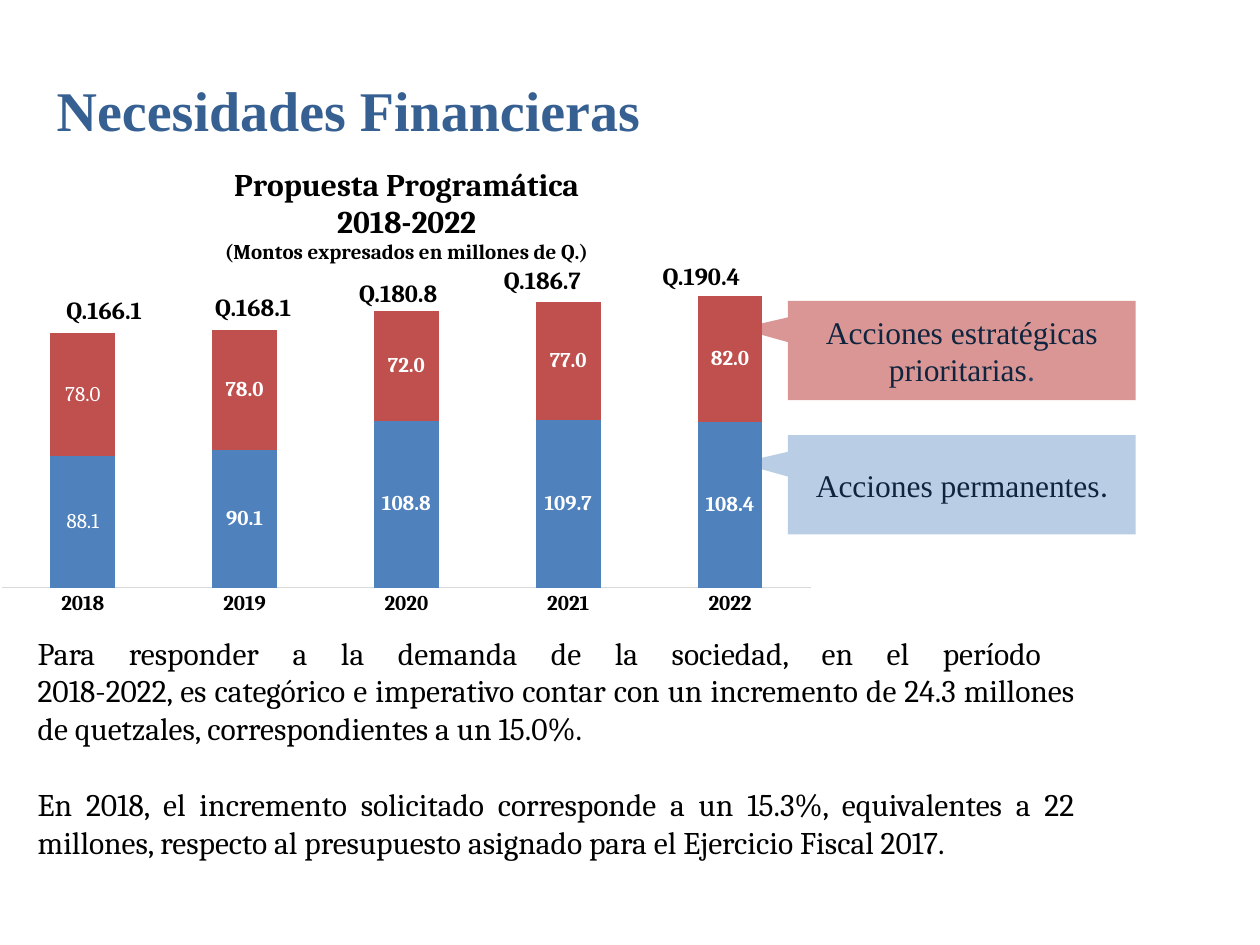
from dataclasses import dataclass

from lxml.etree import SubElement
from pptx import Presentation
from pptx.chart.data import CategoryChartData
from pptx.dml.color import RGBColor
from pptx.enum.chart import XL_CHART_TYPE as ChartType, XL_LABEL_POSITION as LabelPosition
from pptx.enum.chart import XL_TICK_LABEL_POSITION as TickLabels, XL_TICK_MARK as TickMark
from pptx.enum.shapes import MSO_SHAPE as Preset
from pptx.enum.text import MSO_ANCHOR as Anchor, MSO_AUTO_SIZE as AutoSize, PP_ALIGN as Align
from pptx.oxml import parse_xml
from pptx.oxml.ns import nsdecls, qn
from pptx.util import Cm, Pt

SERIF, HEADING = "Cambria", "Times New Roman"
BLACK, WHITE, NAVY = "000000", "FFFFFF", "0F243E"


@dataclass
class Total:
    text: str
    left: float
    top: float


@dataclass
class Callout:
    text: str
    top: float
    fill: str
    stop_color: str


@dataclass
class Series:
    name: str
    values: tuple
    color: str
    first_label: str


TOTALS = [
    Total("Q.166.1", 1.09, 5.82),
    Total("Q.168.1", 4.09, 5.77),
    Total("Q.180.8", 6.99, 5.49),
    Total("Q.186.7", 9.91, 5.21),
    Total("Q.190.4", 13.11, 5.13),
]
CALLOUTS = [
    Callout("Acciones estratégicas prioritarias", 3.56, "D99694", "254061"),
    Callout("Acciones permanentes", 6.27, "B9CDE5", NAVY),
]
YEARS = ["2018", "2019", "2020", "2021", "2022"]
SERIES = [
    Series("Series 1", (86.1, 90.1, 108.8, 109.7, 108.4), "4F81BD", "88.1"),
    Series("Series 2", (80, 78, 72, 77, 82), "C0504D", "78.0"),
]
CHART_TITLE = [
    ("Propuesta Programática", 18),
    ("2018-2022", 18),
    ("(Montos expresados en millones de Q.)", 12),
]
BODY = [
    "Para responder a la demanda de la sociedad, en el período \v"
    "2018-2022, es categórico e imperativo contar con un incremento de "
    "24.3 millones de quetzales, correspondientes a un 15.0%. ",
    "En 2018, el incremento solicitado corresponde a un 15.3%, equivalentes a "
    "22 millones, respecto al presupuesto asignado para el Ejercicio Fiscal 2017.",
]


def rgb(value: str) -> RGBColor:
    return RGBColor.from_string(value)


def style(font, size: float, name: str, color: str, bold: bool = False) -> None:
    font.size, font.name, font.bold = Pt(size), name, bold
    font.color.rgb = rgb(color)


def add_text(page, left: float, top: float, width: float, height: float, text: str):
    box = page.shapes.add_textbox(Cm(left), Cm(top), Cm(width), Cm(height))
    frame = box.text_frame
    frame.word_wrap = True
    frame.auto_size = AutoSize.SHAPE_TO_FIT_TEXT
    frame.text = text
    return frame


def add_total(page, total: Total) -> None:
    frame = add_text(page, total.left, total.top, 2.39, 0.86, total.text)
    style(frame.paragraphs[0].runs[0].font, 14, SERIF, BLACK, True)


def add_callout(page, callout: Callout) -> None:
    # Turned on its side so that the pointer leaves from the short edge
    box = page.shapes.add_shape(Preset.RECTANGULAR_CALLOUT, Cm(18.39), Cm(callout.top), Cm(2), Cm(7.01))
    box.rotation = 90
    box.adjustments[0], box.adjustments[1] = -0.22, 0.64
    box.shadow.inherit = False
    box.fill.solid()
    box.fill.fore_color.rgb = rgb(callout.fill)
    box.line.fill.background()
    frame = box.text_frame
    frame.word_wrap = True
    frame.vertical_anchor = Anchor.MIDDLE
    frame._txBody.bodyPr.set("vert", "vert270")
    frame.text = callout.text
    para = frame.paragraphs[0]
    para.alignment = Align.CENTER
    style(para.runs[0].font, 18, HEADING, NAVY)
    stop = para.add_run()
    stop.text = "."
    style(stop.font, 18, "Calibri", callout.stop_color)


def place(parent, index: int, **settings) -> None:
    """Give a chart part a manual layout, in fractions of the chart."""
    layout = parent.find(qn("c:layout"))
    if layout is None:
        layout = parse_xml(f"<c:layout {nsdecls('c')}/>")
        parent.insert(index, layout)
    manual = SubElement(layout, qn("c:manualLayout"))
    for tag, value in settings.items():
        SubElement(manual, qn(f"c:{tag}")).set("val", str(value))


def add_budget_chart(page) -> None:
    data = CategoryChartData(number_format="0.0")
    data.categories = YEARS
    for item in SERIES:
        data.add_series(item.name, item.values)
    chart = page.shapes.add_chart(
        ChartType.COLUMN_STACKED, Cm(-0.3), Cm(2.97), Cm(16.99), Cm(9.65), data
    ).chart
    chart.has_legend = False
    style(chart.font, 10, "Calibri", BLACK)
    chart._chartSpace.chart.addnext(
        parse_xml(f"<c:spPr {nsdecls('c', 'a')}><a:noFill/><a:ln><a:noFill/></a:ln></c:spPr>")
    )

    # Chart title, kept clear of the yearly totals
    frame = chart.chart_title.text_frame
    frame.text = "\n".join(text for text, _ in CHART_TITLE)
    for para, (_, size) in zip(frame.paragraphs, CHART_TITLE):
        style(para.runs[0].font, size, SERIF, BLACK, True)
    place(chart.chart_title._element, 1, xMode="edge", yMode="edge", x=0.28, y=0.03)
    place(chart._chartSpace.chart.plotArea, 0, layoutTarget="inner", xMode="edge",
          yMode="edge", x=0.02, y=0.28, w=0.96, h=0.64)

    # Axes
    years, amounts = chart.category_axis, chart.value_axis
    style(years.tick_labels.font, 12, SERIF, BLACK, True)
    years.tick_label_position = TickLabels.NEXT_TO_AXIS
    years.major_tick_mark = years.minor_tick_mark = TickMark.NONE
    years.format.line.color.rgb = rgb("D9D9D9")
    years.format.line.width = Pt(0.75)
    amounts.minimum_scale, amounts.maximum_scale = 0, 200
    amounts.has_major_gridlines = False
    amounts.visible = False

    # Columns and their labels
    plot = chart.plots[0]
    plot.gap_width, plot.overlap = 150, 100
    plot.vary_by_categories = False
    for series, item in zip(plot.series, SERIES):
        series.format.fill.solid()
        series.format.fill.fore_color.rgb = rgb(item.color)
        labels = series.data_labels
        labels.show_value = True
        labels.number_format, labels.number_format_is_linked = "0.0", False
        labels.position = LabelPosition.CENTER
        style(labels.font, 12, SERIF, WHITE, True)
        first = series.points[0].data_label
        first.text_frame.text = item.first_label
        style(first.text_frame.paragraphs[0].runs[0].font, 12, SERIF, WHITE)
        first.position = LabelPosition.CENTER


def main() -> None:
    deck = Presentation()
    deck.slide_width, deck.slide_height = Cm(25.4), Cm(19.05)
    page = deck.slides.add_slide(deck.slide_layouts[5])

    # Title
    title = page.shapes.title
    title.left, title.top, title.width, title.height = Cm(0.89), Cm(0.53), Cm(13.23), Cm(3.35)
    title.text_frame.text = "Necesidades Financieras"
    title.text_frame.vertical_anchor = Anchor.MIDDLE
    heading = title.text_frame.paragraphs[0]
    heading.alignment = Align.LEFT
    style(heading.runs[0].font, 32, HEADING, "376092", True)

    # Yearly totals
    for total in TOTALS:
        add_total(page, total)

    # Explanation
    frame = add_text(page, 0.51, 12.65, 21.41, 4.88, "\n".join(BODY))
    for para in frame.paragraphs:
        para.alignment = Align.JUSTIFY
        for span in para.runs:
            style(span.font, 18, SERIF, BLACK)
    frame.paragraphs[1].space_before = Pt(21.6)

    # Callouts, then the chart over their pointers
    for callout in CALLOUTS:
        add_callout(page, callout)
    add_budget_chart(page)

    deck.save("out.pptx")


if __name__ == "__main__":
    main()
